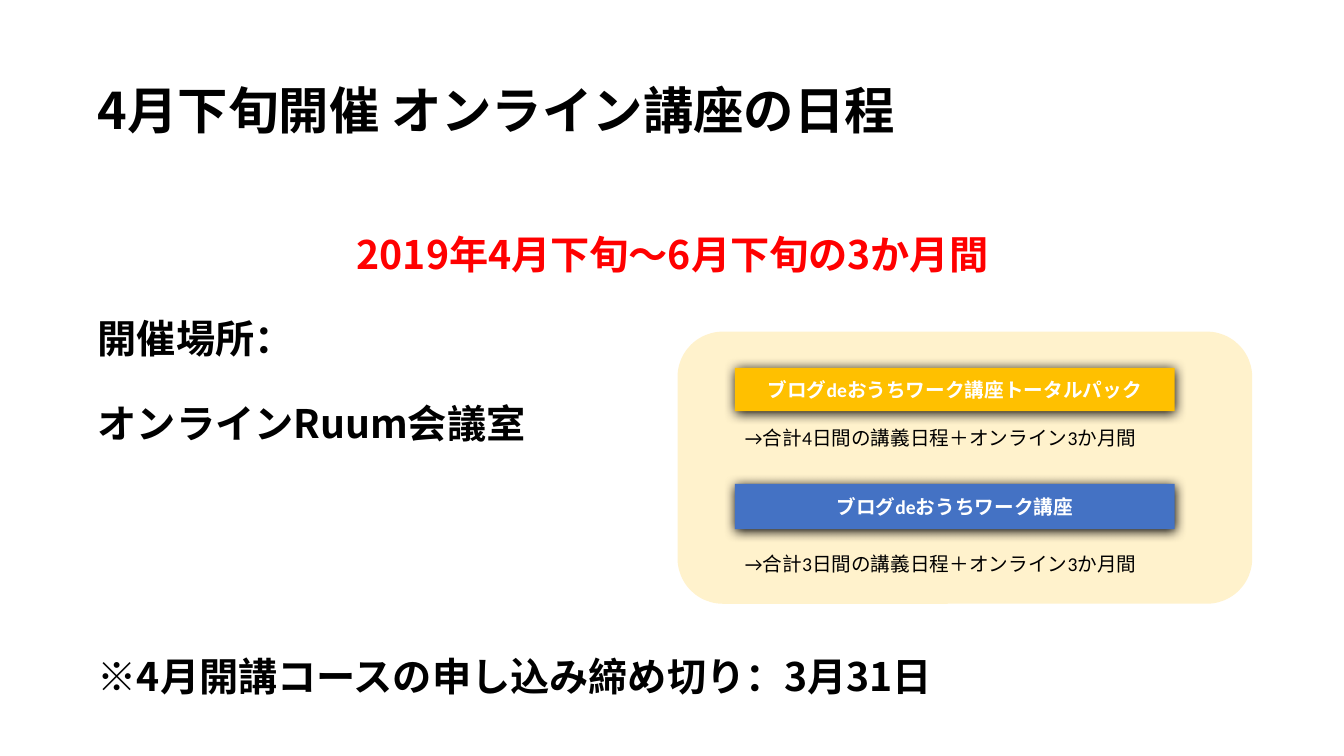
from dataclasses import dataclass

import pptx
import pptx.dml.color
import pptx.enum.shapes
import pptx.enum.text
import pptx.oxml
import pptx.oxml.ns
import pptx.util
from pptx.util import Inches

ALIGN = pptx.enum.text.PP_ALIGN
ANCHOR = pptx.enum.text.MSO_ANCHOR
SHAPES = pptx.enum.shapes.MSO_SHAPE


@dataclass(frozen=True)
class Theme:
    """Colours, fonts and type sizes of the slide."""
    ink: str = "000000"
    accent: str = "FF0000"
    white: str = "FFFFFF"
    panel: str = "FFF2CC"
    gold: str = "FFC000"
    blue: str = "4472C4"
    heading_font: str = "Noto Sans CJK JP"
    label_font: str = "Calibri"
    title_size: int = 36
    body_size: int = 28
    label_size: int = 14


THEME = Theme()


def rgb(value):
    """Turn a hex string into a colour."""
    return pptx.dml.color.RGBColor.from_string(value)


def style(paragraph, font_name, size, color, bold=False):
    """Format every run of a paragraph for Latin and East Asian text."""
    for run in paragraph.runs:
        font = run.font
        font.name, font.size, font.bold = font_name, pptx.util.Pt(size), bold
        font.color.rgb = rgb(color)
        east_asian = pptx.oxml.parse_xml(
            f'<a:ea {pptx.oxml.ns.nsdecls("a")} typeface="{font_name}"/>')
        run.font._element.find(pptx.oxml.ns.qn("a:latin")).addnext(east_asian)


def add_text_box(slide, left, top, width, height, inset):
    """Add an empty wrapping text box and return its text frame."""
    box = slide.shapes.add_textbox(*map(Inches, (left, top, width, height)))
    frame = box.text_frame
    frame.word_wrap = True
    frame.margin_left = frame.margin_right = Inches(inset)
    frame.margin_top = frame.margin_bottom = Inches(0.05)
    return frame


def add_block(slide, preset, left, top, width, height, color):
    """Add a filled shape without outline or shadow."""
    shape = slide.shapes.add_shape(preset, *map(Inches, (left, top, width, height)))
    shape.shadow.inherit = False
    shape.fill.solid()
    shape.fill.fore_color.rgb = rgb(color)
    shape.line.fill.background()
    return shape


def add_shadow(shape):
    """Give a shape a soft black shadow just below it."""
    effects = shape._element.spPr.find(pptx.oxml.ns.qn("a:effectLst"))
    effects.append(pptx.oxml.parse_xml(
        f'<a:outerShdw {pptx.oxml.ns.nsdecls("a")} blurRad="{pptx.util.Pt(8.5)}" '
        f'dist="{pptx.util.Pt(1)}" dir="5400000" algn="t" rotWithShape="0">'
        f'<a:srgbClr val="{THEME.ink}"/></a:outerShdw>'))


def add_title(slide, left, top, width, height):
    """Write the slide title, centred vertically in its box."""
    frame = add_text_box(slide, left, top, width, height, 0.05)
    frame.vertical_anchor = ANCHOR.MIDDLE
    frame.text = "4月下旬開催 オンライン講座の日程"
    frame.paragraphs[0].line_spacing = 0.9
    style(frame.paragraphs[0], THEME.heading_font, THEME.title_size, THEME.ink, True)


def add_schedule(slide, left, top, width, height):
    """Write the period, the place and the deadline."""
    frame = add_text_box(slide, left, top, width, height, 0.05)
    lines = [
        ("2019年4月下旬～6月下旬の3か月間", THEME.accent, ALIGN.CENTER, 0),
        ("開催場所：", THEME.ink, ALIGN.LEFT, 10),
        ("オンラインRuum会議室", THEME.ink, ALIGN.LEFT, 10),
        ("※4月開講コースの申し込み締め切り：3月31日", THEME.ink, ALIGN.LEFT, 130),
    ]
    frame.text = "\n".join(line[0] for line in lines)
    for paragraph, (_, color, alignment, space) in zip(frame.paragraphs, lines):
        paragraph.alignment = alignment
        paragraph.line_spacing = 1.5
        paragraph.space_before = pptx.util.Pt(space)
        style(paragraph, THEME.heading_font, THEME.body_size, color, True)


def add_courses(slide, left, top, width, height):
    """Draw the panel with each course label and its note."""
    add_block(slide, SHAPES.ROUNDED_RECTANGLE, left, top, width, height, THEME.panel)
    courses = [
        ("ブログdeおうちワーク講座トータルパック", THEME.gold, 4, 0.36, 0.43, 0.89),
        ("ブログdeおうちワーク講座", THEME.blue, 3, 1.51, 0.45, 2.14),
    ]
    for name, color, days, label_top, label_height, note_top in courses:
        label = add_block(slide, SHAPES.RECTANGLE, left + 0.57, top + label_top,
                          4.36, label_height, color)
        add_shadow(label)
        label.text_frame.text = name
        label.text_frame.vertical_anchor = ANCHOR.MIDDLE
        paragraph = label.text_frame.paragraphs[0]
        paragraph.alignment = ALIGN.CENTER
        style(paragraph, THEME.label_font, THEME.label_size, THEME.white, True)
        note = add_text_box(slide, left + 0.57, top + note_top, 4.11, 0.34, 0.1)
        note.text = f"→合計{days}日間の講義日程＋オンライン3か月間"
        style(note.paragraphs[0], THEME.label_font, THEME.label_size, THEME.ink)


def main():
    """Build and save the slide."""
    presentation = pptx.Presentation()
    presentation.slide_width, presentation.slide_height = Inches(13.33), Inches(7.5)
    slide = presentation.slides.add_slide(presentation.slide_layouts[6])
    add_courses(slide, 6.72, 3.29, 5.7, 2.7)
    add_title(slide, 0.92, 0.4, 11.5, 1.45)
    add_schedule(slide, 0.92, 2, 11.5, 5.1)
    presentation.save("out.pptx")


if __name__ == "__main__":
    main()
